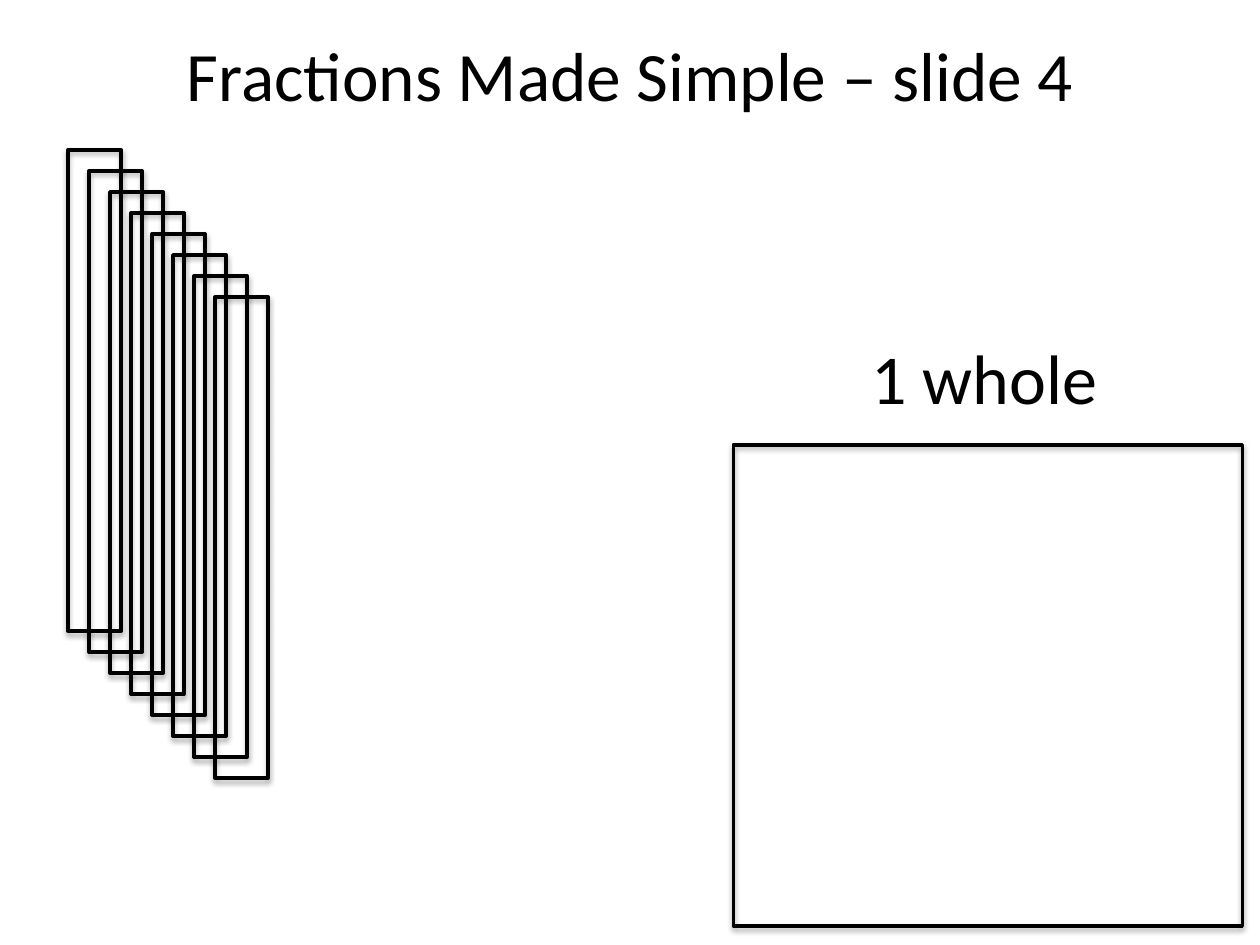
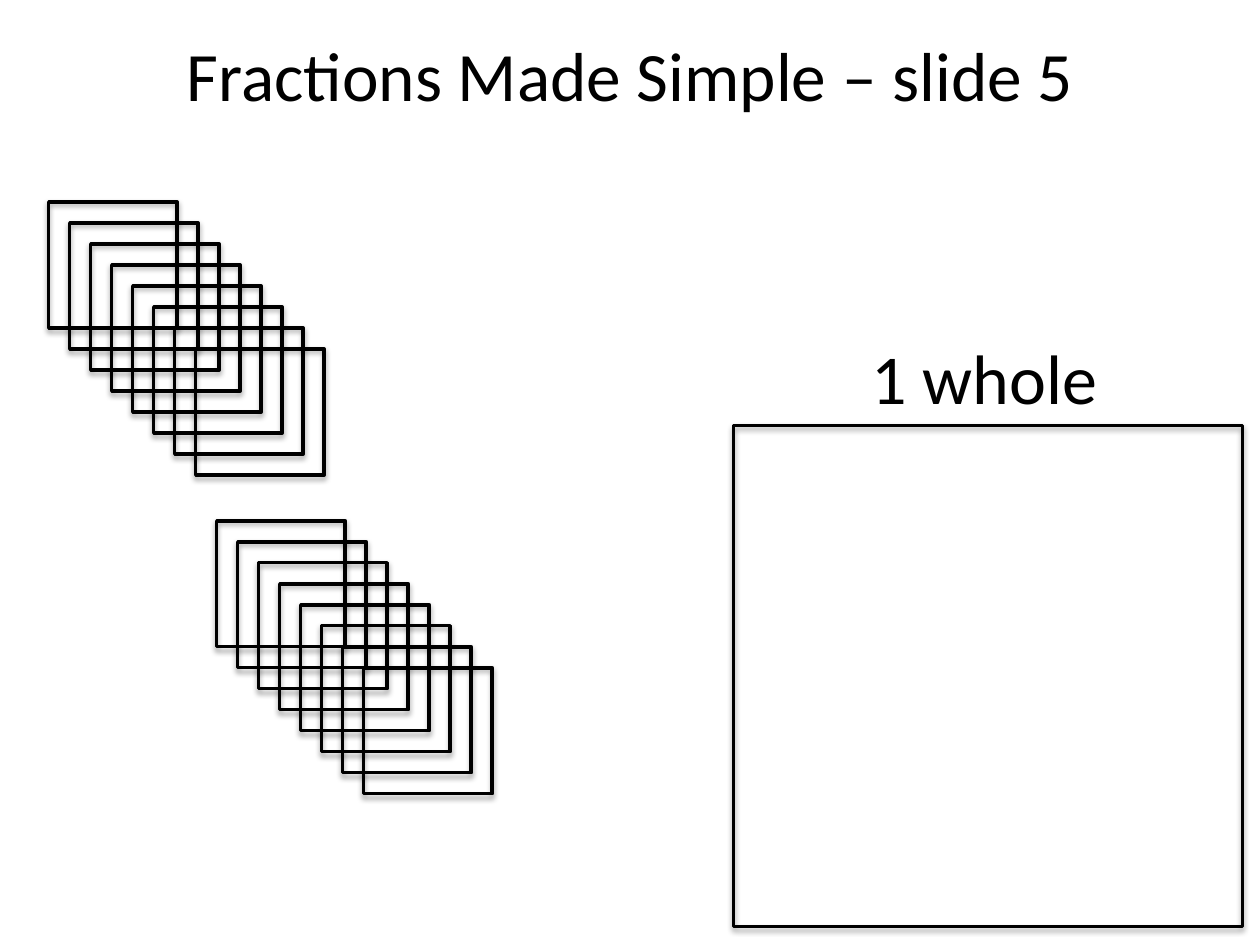
"""Build two fraction slides: stacks of equal pieces beside one whole."""
from dataclasses import dataclass

from lxml import etree
from pptx import Presentation
from pptx.dml.color import RGBColor
from pptx.enum.shapes import MSO_SHAPE
from pptx.enum.text import MSO_ANCHOR, PP_ALIGN
from pptx.oxml.ns import qn
from pptx.util import Inches, Pt

RECT = MSO_SHAPE.RECTANGLE
LEFT, CENTER = PP_ALIGN.LEFT, PP_ALIGN.CENTER
TOP, MIDDLE = MSO_ANCHOR.TOP, MSO_ANCHOR.MIDDLE


@dataclass
class Theme:
    ink: RGBColor = RGBColor(0, 0, 0)
    face: str = "Calibri"
    title: float = 39.6
    label: float = 40
    line: float = 2
    blur: float = 3.15
    drop: float = 1.81
    shade: int = 35


theme = Theme()
deck = Presentation()
deck.slide_width, deck.slide_height = Inches(10), Inches(7.5)
cell = deck.slide_width / 60
blank = deck.slide_layouts[6]


def add_text(slide, words, area, size, align, anchor):
    box = slide.shapes.add_textbox(*(round(n * cell) for n in area))
    frame = box.text_frame
    frame.word_wrap = True
    frame.vertical_anchor = anchor
    para = frame.paragraphs[0]
    para.text, para.alignment = words, align
    style = {"name": theme.face, "size": Pt(size)}
    for key, value in style.items():
        setattr(para.font, key, value)
    para.font.color.rgb = theme.ink


def add_piece(slide, left, top, width, height):
    area = (left, top, width, height)
    piece = slide.shapes.add_shape(RECT, *(round(n * cell) for n in area))
    piece.fill.background()
    piece.line.color.rgb = theme.ink
    piece.line.width = Pt(theme.line)
    piece.shadow.inherit = False
    effects = piece._element.spPr.find(qn("a:effectLst"))
    shadow = etree.SubElement(effects, qn("a:outerShdw"), {
        "blurRad": str(Pt(theme.blur)), "dist": str(Pt(theme.drop)),
        "dir": "5400000", "rotWithShape": "0"})
    tint = etree.SubElement(shadow, qn("a:srgbClr"), val=str(theme.ink))
    etree.SubElement(tint, qn("a:alpha"), val=str(theme.shade * 1000))


count = 8
pages = [
    {"number": 4, "whole": (21.18, 22.92), "piece": (2.52, 22.92),
     "stacks": [(3.24, 7.14)]},
    {"number": 5, "whole": (20.26, 23.86), "piece": (6.12, 6),
     "stacks": [(2.32, 9.62), (2.32 + count, 24.8)]},
]

for page in pages:
    slide = deck.slides.add_slide(blank)
    add_text(slide, f"Fractions Made Simple – slide {page['number']}",
             (4.5, 1.74, 51, 3.54), theme.title, CENTER, MIDDLE)
    add_text(slide, "1 whole", (40.92, 15.66, 12.84, 4.62),
             theme.label, LEFT, TOP)
    top, height = page["whole"]
    add_piece(slide, 34.92, top, 24.24, height)
    for left, top in page["stacks"]:
        for step in range(count):
            add_piece(slide, left + step, top + step, *page["piece"])

deck.save("out.pptx")
